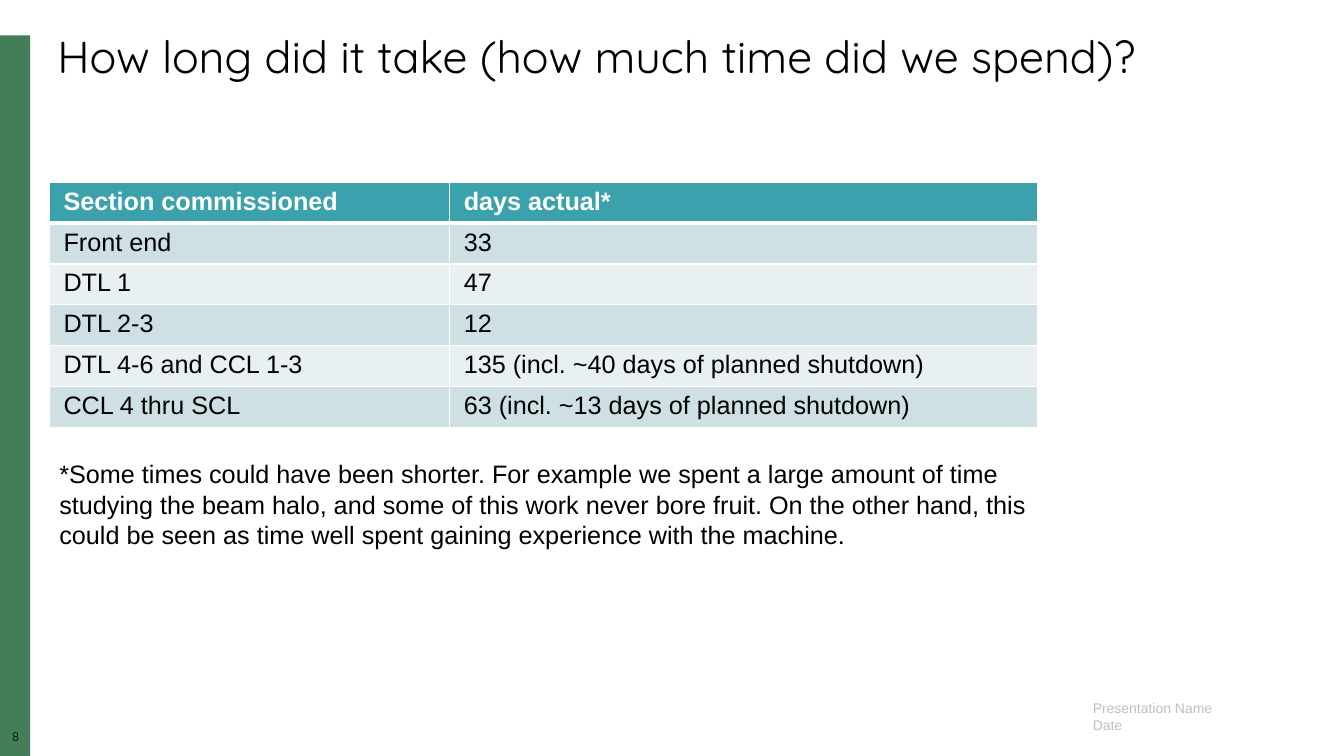
from lxml import etree
from pptx import Presentation
from pptx import util as u
from pptx.dml.color import RGBColor
from pptx.enum import shapes, text
from pptx.oxml.ns import qn

BLACK = RGBColor(0x00, 0x00, 0x00)
WHITE = RGBColor(0xFF, 0xFF, 0xFF)
GREY = RGBColor(0xBF, 0xBF, 0xBF)
GREEN = RGBColor(0x44, 0x7E, 0x59)
TEAL = RGBColor(0x3B, 0xA2, 0xAD)
BANDS = [RGBColor(0xE8, 0xF0, 0xF1), RGBColor(0xCE, 0xE0, 0xE3)]

SECTION_DAYS = [
    ("Section commissioned", "days actual*"),
    ("Front end", "33"),
    ("DTL 1", "47"),
    ("DTL 2-3", "12"),
    ("DTL 4-6 and CCL 1-3", "135 (incl. ~40 days of planned shutdown)"),
    ("CCL 4 thru SCL", "63 (incl. ~13 days of planned shutdown)"),
]
FOOTNOTE = (
    "*Some times could have been shorter. For example we spent a large amount of time "
    "studying the beam halo, and some of this work never bore fruit. On the other hand, "
    "this could be seen as time well spent gaining experience with the machine."
)


def write(frame, words, size=18, font="Arial", color=BLACK, bold=False,
          align=text.PP_ALIGN.LEFT, spacing=1.0):
    """Fill a text frame, one paragraph for each line of words."""
    for index, line in enumerate(words.split("\n")):
        para = frame.paragraphs[0] if index == 0 else frame.add_paragraph()
        para.alignment = align
        para.line_spacing = spacing
        span = para.add_run()
        span.text = line
        span.font.size = u.Pt(size)
        span.font.name = font
        span.font.color.rgb = color
        span.font.bold = bold


def set_border(cell, side, width):
    line = etree.SubElement(cell._tc.get_or_add_tcPr(), qn(f"a:ln{side}"),
                            w=str(u.Pt(width)))
    fill = etree.SubElement(line, qn("a:solidFill"))
    etree.SubElement(fill, qn("a:srgbClr"), val=str(WHITE))


class SlideBuilder:
    def __init__(self, page):
        self.page = page

    def bar(self, left, top, width, height, color):
        shape = self.page.shapes.add_shape(
            shapes.MSO_SHAPE.RECTANGLE, u.Inches(left), u.Inches(top),
            u.Inches(width), u.Inches(height))
        shape.shadow.inherit = False
        shape.fill.solid()
        shape.fill.fore_color.rgb = color
        shape.line.fill.background()

    def label(self, words, left, top, width, height, inset=True, **style):
        box = self.page.shapes.add_textbox(
            u.Inches(left), u.Inches(top), u.Inches(width), u.Inches(height))
        frame = box.text_frame
        frame.word_wrap = True
        if not inset:
            frame.margin_left = frame.margin_right = 0
            frame.margin_top = frame.margin_bottom = 0
        write(frame, words, **style)

    def table(self, rows, left, top, widths, row_height):
        table = self.page.shapes.add_table(
            len(rows), len(widths), u.Inches(left), u.Inches(top),
            u.Inches(sum(widths)), u.Inches(row_height * len(rows))).table
        for column, width in zip(table.columns, widths):
            column.width = u.Inches(width)
        for r, row in enumerate(rows):
            header = r == 0
            for c, words in enumerate(row):
                cell = table.cell(r, c)
                cell.margin_left = cell.margin_right = u.Inches(0.14)
                for side in "LRTB":
                    thick = (header and side == "B") or (r == 1 and side == "T")
                    set_border(cell, side, 3 if thick else 1)
                cell.fill.solid()
                cell.fill.fore_color.rgb = TEAL if header else BANDS[r % 2]
                write(cell.text_frame, words, bold=header,
                      color=WHITE if header else BLACK)


def main():
    deck = Presentation()
    deck.slide_width = u.Inches(13.33)
    deck.slide_height = u.Inches(7.5)
    slide = SlideBuilder(deck.slides.add_slide(deck.slide_layouts[6]))

    slide.bar(0, 0.35, 0.3, 7.15, GREEN)
    slide.label("8", 0, 7.25, 0.31, 0.17, inset=False, size=9, font="Quicksand",
                align=text.PP_ALIGN.CENTER, spacing=0.9)
    slide.label("Presentation Name\nDate", 10.74, 6.89, 2.23, 0.44,
                size=10, color=GREY)
    slide.label("How long did it take (how much time did we spend)?",
                0.47, 0.3, 12.5, 0.59, size=32, font="Quicksand", spacing=0.9)
    slide.table(SECTION_DAYS, 0.49, 1.81, [3.97, 5.83], 0.405)
    slide.label(FOOTNOTE, 0.49, 4.5, 10.01, 1.01)

    deck.save("out.pptx")


if __name__ == "__main__":
    main()
